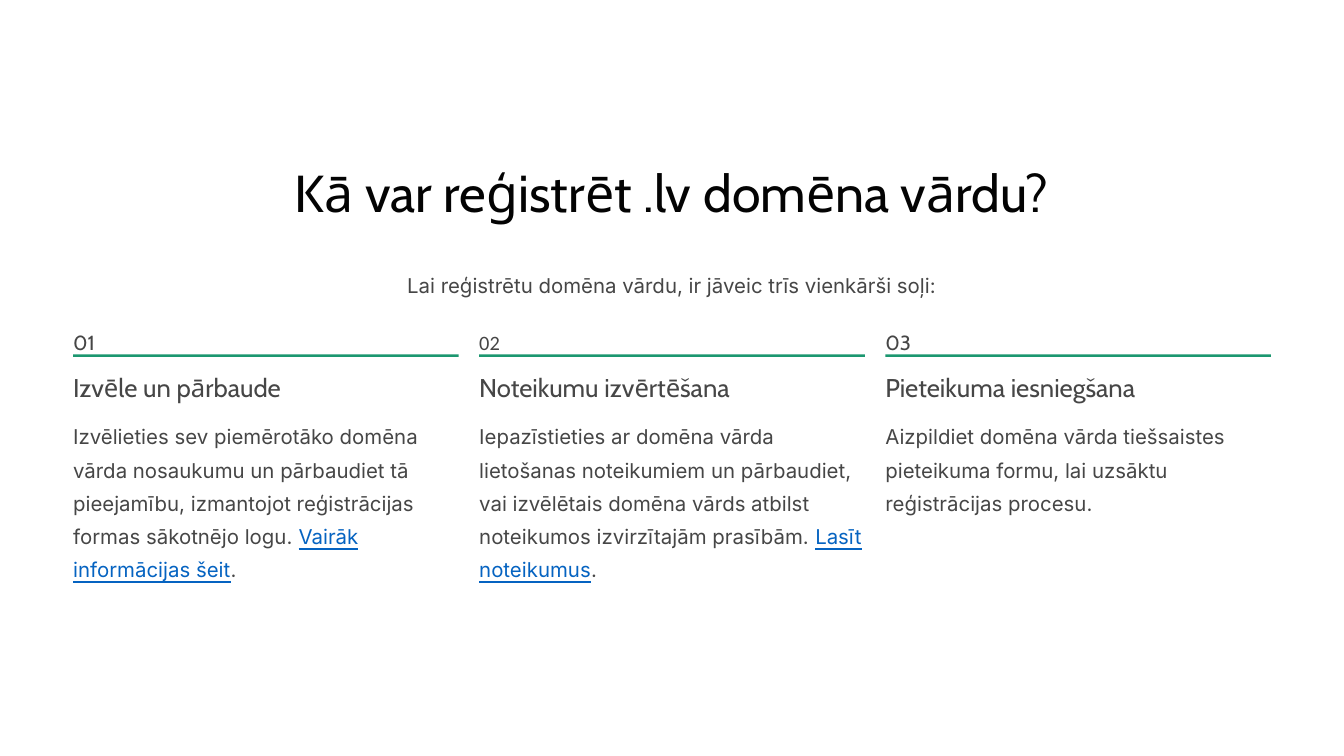
"""Build a slide with the three steps of registering a .lv domain name."""
from pptx import Presentation
from pptx import util as u
from pptx.dml.color import RGBColor
from pptx.enum import shapes, text

PX = 914400 // 200
WHITE = RGBColor(0xFF, 0xFF, 0xFF)
BLACK = RGBColor(0x03, 0x03, 0x03)
GREY = RGBColor(0x46, 0x46, 0x46)
GREEN = RGBColor(0x1C, 0x97, 0x70)
BLUE = RGBColor(0x05, 0x63, 0xC1)

LEFT, PITCH, COLUMN = 174, 967, 918
STEPS = [
    ("01", "Cabin", "Izvēle un pārbaude", 620, 396,
     "Izvēlieties sev piemērotāko domēna vārda nosaukumu un pārbaudiet tā pieejamību, "
     "izmantojot reģistrācijas formas sākotnējo logu. ", "Vairāk informācijas šeit"),
    ("02", "Calibri", "Noteikumu izvērtēšana", 684, 396,
     "Iepazīstieties ar domēna vārda lietošanas noteikumiem un pārbaudiet, vai izvēlētais "
     "domēna vārds atbilst noteikumos izvirzītajām prasībām. ", "Lasīt noteikumus"),
    ("03", "Cabin", "Pieteikuma iesniegšana", 700, 238,
     "Aizpildiet domēna vārda tiešsaistes pieteikuma formu, lai uzsāktu reģistrācijas "
     "procesu.", None),
]


def add_run(p, words, font, size, color, underline=False):
    r = p.add_run()
    r.text = words
    r.font.name = font
    r.font.size = u.Pt(size)
    r.font.color.rgb = color
    r.font.underline = underline


def set_text(sp, box, words, font, size, spacing, color=GREY, align=text.PP_ALIGN.LEFT, wrap=False):
    sp.left, sp.top, sp.width, sp.height = [v * PX for v in box]
    tf = sp.text_frame
    tf.margin_left = tf.margin_top = tf.margin_right = tf.margin_bottom = 0
    tf.auto_size = text.MSO_AUTO_SIZE.NONE
    tf.vertical_anchor = text.MSO_ANCHOR.TOP
    tf.word_wrap = wrap
    p = tf.paragraphs[0]
    p.alignment = align
    p.line_spacing = u.Pt(spacing)
    add_run(p, words, font, size, color)
    return p


prs = Presentation()
prs.slide_width, prs.slide_height = 3200 * PX, 1800 * PX
s = prs.slides.add_slide(prs.slide_layouts[5])
s.background.fill.solid()
s.background.fill.fore_color.rgb = WHITE

set_text(s.shapes.title, (590, 376, 2020, 156), "Kā var reģistrēt .lv domēna vārdu?",
         "Cabin", 44.5, 55.5, BLACK, text.PP_ALIGN.CENTER)
set_text(s.shapes.add_textbox(0, 0, 0, 0), (LEFT, 630, 2852, 80),
         "Lai reģistrētu domēna vārdu, ir jāveic trīs vienkārši soļi:",
         "Inter", 17.5, 28.5, align=text.PP_ALIGN.CENTER)

for i, (number, number_font, heading, heading_width, body_height, body, link) in enumerate(STEPS):
    x = LEFT + i * PITCH
    set_text(s.shapes.add_textbox(0, 0, 0, 0), (x, 766, 50, 62), number, number_font, 17.5, 28.5)

    rule = s.shapes.add_shape(shapes.MSO_SHAPE.RECTANGLE, x * PX, 844 * PX, COLUMN * PX, 6 * PX)
    rule.shadow.inherit = False
    rule.fill.solid()
    rule.fill.fore_color.rgb = GREEN
    rule.line.fill.background()

    set_text(s.shapes.add_textbox(0, 0, 0, 0), (x, 882, heading_width, 78), heading, "Cabin", 22, 27.5)
    p = set_text(s.shapes.add_textbox(0, 0, 0, 0), (x, 990, COLUMN, body_height), body,
                 "Inter", 17.5, 28.5, wrap=True)
    if link:
        add_run(p, link, "Inter", 17.5, BLUE, True)
        add_run(p, ".", "Inter", 17.5, GREY)

prs.save("out.pptx")
